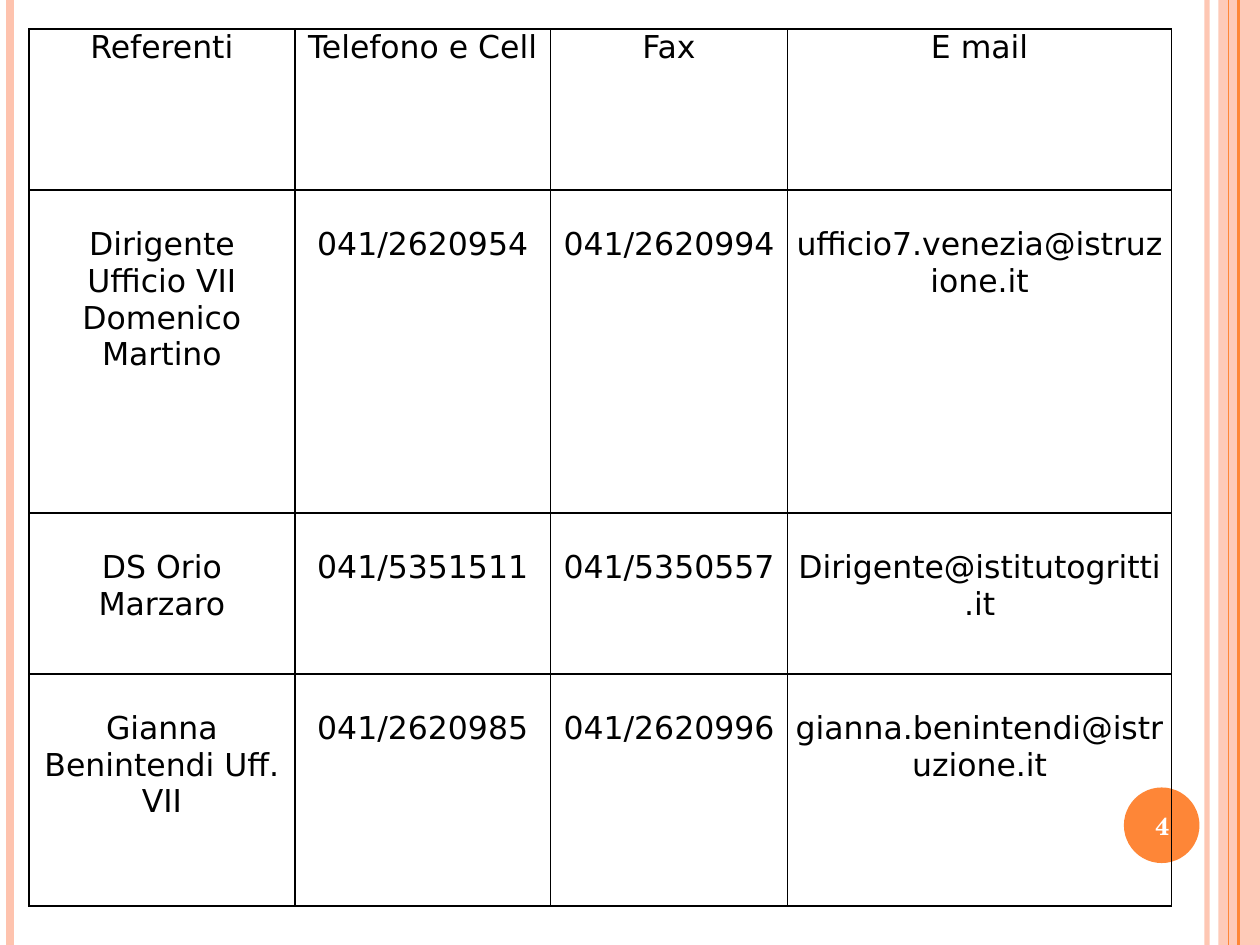
from lxml import etree
from pptx import Presentation
from pptx import util as u
from pptx.dml.color import RGBColor
from pptx.enum import shapes, text
from pptx.oxml import ns

PEACH = RGBColor(0xFE, 0xC3, 0xAE)
ORANGE = RGBColor(0xFE, 0x86, 0x37)
BLACK = RGBColor(0, 0, 0)
WHITE = RGBColor(0xFF, 0xFF, 0xFF)


def fade(fill, percent):
    """Set the opacity of the solid colour below an element."""
    color = fill.find(".//" + ns.qn("a:srgbClr"))
    etree.SubElement(color, ns.qn("a:alpha"), val=str(percent * 1000))


prs = Presentation()
prs.slide_width, prs.slide_height = u.Inches(10), u.Inches(7.5)
slide = prs.slides.add_slide(prs.slide_layouts[6])
items = slide.shapes

# Side stripes
band = items.add_shape(shapes.MSO_SHAPE.RECTANGLE,
                       u.Inches(9.67), 0, u.Inches(0.33), u.Inches(7.5))
band.shadow.inherit = False
band.fill.solid()
band.fill.fore_color.rgb = PEACH
band.line.fill.background()
fade(band._element.spPr, 87)

stripes = [(9.58, PEACH, 3, 93), (0.08, PEACH, 4.5, 100),
           (9.83, ORANGE, 1.5, 100), (9.75, ORANGE, 0.75, 100)]
for x, color, width, alpha in stripes:
    line = items.add_connector(shapes.MSO_CONNECTOR.STRAIGHT,
                               u.Inches(x), 0, u.Inches(x), u.Inches(7.5))
    line.line.color.rgb = color
    line.line.width = u.Pt(width)
    props = line._element.spPr
    etree.SubElement(props, ns.qn("a:effectLst"))
    if alpha < 100:
        fade(props, alpha)

# Page number
disc = items.add_shape(shapes.MSO_SHAPE.OVAL, u.Inches(8.92), u.Inches(6.25),
                       u.Inches(0.6), u.Inches(0.6))
disc.shadow.inherit = False
disc.fill.solid()
disc.fill.fore_color.rgb = ORANGE
disc.line.fill.background()

page = items.add_textbox(u.Inches(8.89), u.Inches(6.27),
                         u.Inches(0.67), u.Inches(0.57)).text_frame
page.word_wrap = True
page.vertical_anchor = text.MSO_ANCHOR.MIDDLE
page.text = "4"
para = page.paragraphs[0]
para.alignment = text.PP_ALIGN.CENTER
para.font.name, para.font.size = "TeX Gyre Schola", u.Pt(14)
para.font.bold = True
para.font.color.rgb = WHITE

# Contact table
rows = [
    ("Referenti", "Telefono e Cell", "Fax", "E mail"),
    ("Dirigente Ufficio VII\nDomenico Martino", "041/2620954", "041/2620994",
     "ufficio7.venezia@istruzione.it"),
    ("DS Orio Marzaro", "041/5351511", "041/5350557",
     "Dirigente@istitutogritti.it"),
    ("Gianna Benintendi Uff. VII", "041/2620985", "041/2620996",
     "gianna.benintendi@istruzione.it"),
]
widths = [2.11, 2.03, 1.88, 3.05]
heights = [1.28, 2.56, 1.28, 1.84]

table = items.add_table(len(rows), len(widths), u.Inches(0.23), u.Inches(0.23),
                        u.Inches(sum(widths)), u.Inches(sum(heights))).table
table.first_row = table.horz_banding = False
for col, width in zip(table.columns, widths):
    col.width = u.Inches(width)

for r, row in enumerate(rows):
    table.rows[r].height = u.Inches(heights[r])
    for c, words in enumerate(row):
        cell = table.cell(r, c)
        cell.margin_left = cell.margin_right = u.Inches(0.05)
        cell.margin_top = u.Inches(0.29 if r else 0)
        cell.margin_bottom = 0
        cell.text_frame.text = words
        for para in cell.text_frame.paragraphs:
            para.alignment = text.PP_ALIGN.CENTER
            for run in para.runs:
                run.font.name, run.font.size = "DejaVu Sans", u.Pt(18)
                run.font.color.rgb = BLACK
        props = cell._tc.get_or_add_tcPr()
        for side in ("lnL", "lnR", "lnT", "lnB"):
            edge = etree.SubElement(props, ns.qn("a:" + side), w=str(u.Pt(1)))
            fill = etree.SubElement(edge, ns.qn("a:solidFill"))
            etree.SubElement(fill, ns.qn("a:srgbClr"), val=str(BLACK))
        cell.fill.background()

prs.save("out.pptx")
